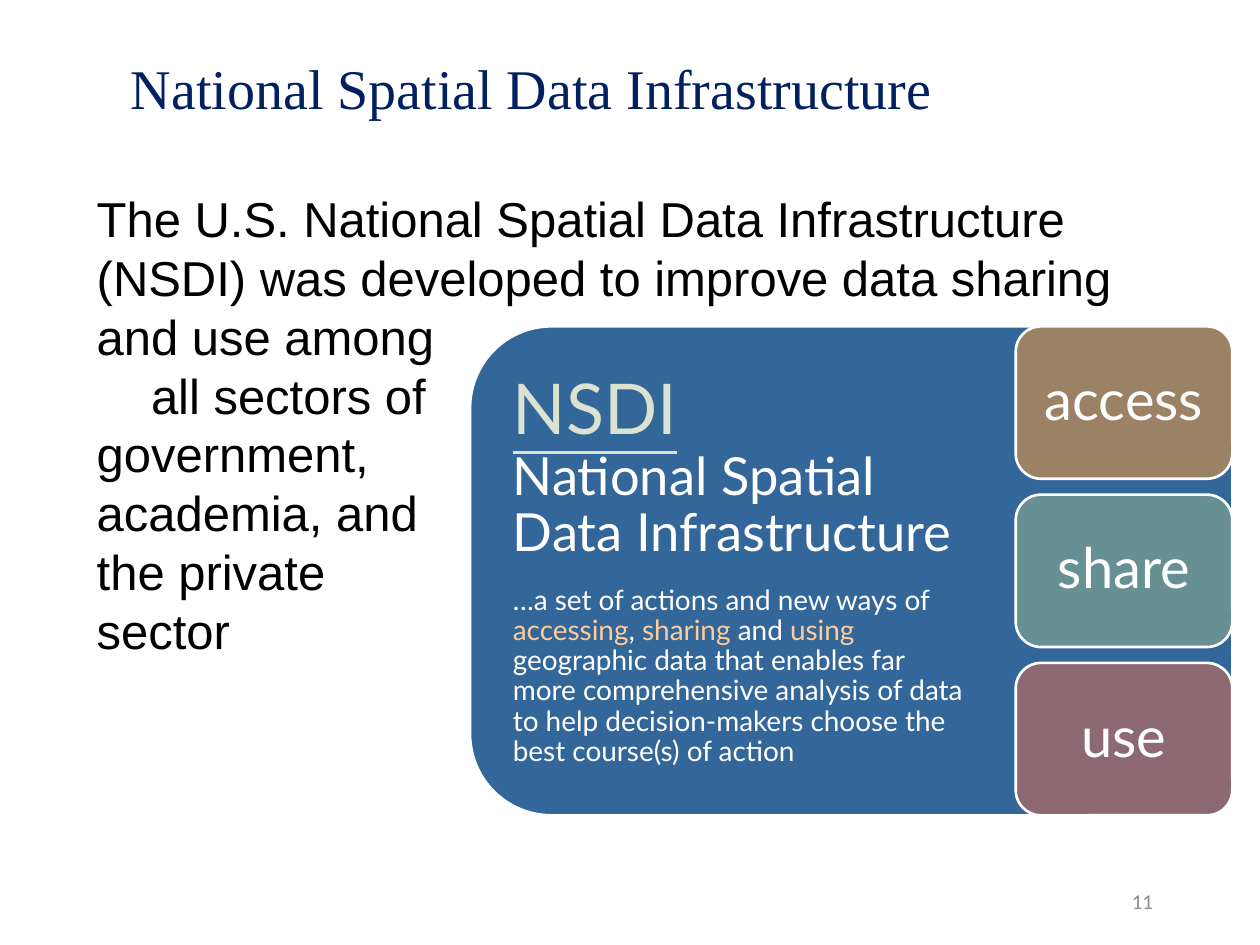
"""Build the National Spatial Data Infrastructure slide."""
from dataclasses import dataclass

from pptx import Presentation
from pptx.dml.color import RGBColor
from pptx.enum import shapes, text
from pptx.util import Pt


@dataclass(frozen=True)
class Theme:
    """Hold the colours, fonts and type sizes of the slide."""
    navy: str = "002060"
    black: str = "000000"
    white: str = "FFFFFF"
    grey: str = "8C8C8C"
    blue: str = "336699"
    sage: str = "DCE2D0"
    peach: str = "FFCC99"
    brown: str = "9C8265"
    teal: str = "679095"
    plum: str = "8D6974"
    title_font: str = "Times New Roman"
    body_font: str = "Arial"
    number_font: str = "Calibri"
    panel_font: str = "Lato"
    title: int = 32
    body: int = 28
    number: int = 12
    acronym: int = 40
    name: int = 30
    detail: int = 16
    tile: int = 32


THEME = Theme()
PANEL = (268.6, 186.5, 435.6, 279.4)
TILE_WIDTH, TILE_HEIGHT = 123.8, 87.1
TILES = (("access", THEME.brown), ("share", THEME.teal), ("use", THEME.plum))
MIDDLE = text.MSO_ANCHOR.MIDDLE
PANEL_INSETS = (9.4, 5, 136.8, 5)
TILE_INSETS = (9.4, 5, 9.4, 5)


def style(font, name=None, size=None, color=None):
    """Set the given font properties."""
    if name:
        font.name = name
    if size:
        font.size = Pt(size)
    if color:
        font.color.rgb = RGBColor.from_string(color)


def set_frame(frame, insets, anchor):
    """Set wrapping, insets and anchor of a text frame."""
    frame.word_wrap = True
    frame.vertical_anchor = anchor
    frame.margin_left, frame.margin_top, frame.margin_right, frame.margin_bottom = map(Pt, insets)


def add_box(page, bounds, words, font, align=None, anchor=MIDDLE, spacing=None):
    """Add a text box with one paragraph for each string in words."""
    frame = page.shapes.add_textbox(*map(Pt, bounds)).text_frame
    set_frame(frame, (7.2, 3.6, 7.2, 3.6), anchor)
    for index, line in enumerate(words):
        para = frame.add_paragraph() if index else frame.paragraphs[0]
        para.text = line
        para.alignment = align
        para.line_spacing = spacing
        style(para.font, *font)
    return frame


def add_block(page, kind, bounds, fill, outline=True):
    """Add a filled preset shape, with a white outline if wanted."""
    block = page.shapes.add_shape(kind, *map(Pt, bounds))
    block.shadow.inherit = False
    block.fill.solid()
    block.fill.fore_color.rgb = RGBColor.from_string(fill)
    if outline:
        block.line.color.rgb = RGBColor.from_string(THEME.white)
        block.line.width = Pt(1.5)
    else:
        block.line.fill.background()
    return block


def add_span(para, words, size, color):
    """Add a run with its own size and colour."""
    span = para.add_run()
    span.text = words
    style(span.font, size=size, color=color)
    return span


def add_definition(page):
    """Add the blue panel with the definition of the infrastructure."""
    add_block(page, shapes.MSO_SHAPE.ROUNDED_RECTANGLE, PANEL, THEME.blue)
    block = add_block(page, shapes.MSO_SHAPE.RECTANGLE, (283.7, 200.2, 405.4, 252),
                      THEME.blue, outline=False)
    frame = block.text_frame
    set_frame(frame, PANEL_INSETS, MIDDLE)
    heading, detail = frame.paragraphs[0], frame.add_paragraph()
    for para in (heading, detail):
        para.alignment = text.PP_ALIGN.LEFT
        para.line_spacing = 0.9
        para.space_after = Pt(13)
        style(para.font, THEME.panel_font)
    add_span(heading, "NSDI", THEME.acronym, THEME.sage).font.underline = True
    heading.add_line_break()
    add_span(heading, "National Spatial Data Infrastructure", THEME.name, THEME.white)
    for words, color in (
        ("…a set of actions and new ways of ", THEME.white),
        ("accessing", THEME.peach),
        (", ", THEME.white),
        ("sharing", THEME.peach),
        (" and ", THEME.white),
        ("using ", THEME.peach),
        ("geographic data that enables far more comprehensive analysis of data "
         "to help decision-makers choose the best course(s) of action", THEME.white),
    ):
        add_span(detail, words, THEME.detail, color)


def add_tiles(page):
    """Stack the tiles evenly along the right edge of the panel."""
    left, top, width, height = PANEL
    step = (height - TILE_HEIGHT) / (len(TILES) - 1)
    for index, (label, fill) in enumerate(TILES):
        bounds = (left + width - TILE_WIDTH, top + index * step, TILE_WIDTH, TILE_HEIGHT)
        tile = add_block(page, shapes.MSO_SHAPE.ROUNDED_RECTANGLE, bounds, fill)
        set_frame(tile.text_frame, TILE_INSETS, MIDDLE)
        para = tile.text_frame.paragraphs[0]
        para.text = label
        para.alignment = text.PP_ALIGN.CENTER
        para.line_spacing = 0.9
        style(para.font, THEME.panel_font, THEME.tile, THEME.white)


def main():
    """Build and save the deck."""
    deck = Presentation()
    deck.slide_width, deck.slide_height = Pt(720), Pt(540)
    page = deck.slides.add_slide(deck.slide_layouts[6])
    add_box(page, (67.7, 23.8, 598.3, 56.2), ["National Spatial Data Infrastructure"],
            (THEME.title_font, THEME.title, THEME.navy), spacing=0.9)
    add_box(page, (504, 500.4, 162, 28.8), ["11"],
            (THEME.number_font, THEME.number, THEME.grey), text.PP_ALIGN.RIGHT)
    body = add_box(
        page, (48.2, 104.4, 642.2, 354.2),
        ["The U.S. National Spatial Data Infrastructure (NSDI) was developed "
         "to improve data sharing and use among",
         "all sectors of\vgovernment,\vacademia, and\vthe private\vsector"],
        (THEME.body_font, THEME.body, THEME.black),
        anchor=text.MSO_ANCHOR.TOP, spacing=Pt(33.6))
    body.paragraphs[1]._p.get_or_add_pPr().set("indent", str(Pt(31)))
    add_definition(page)
    add_tiles(page)
    deck.save("out.pptx")


if __name__ == "__main__":
    main()
